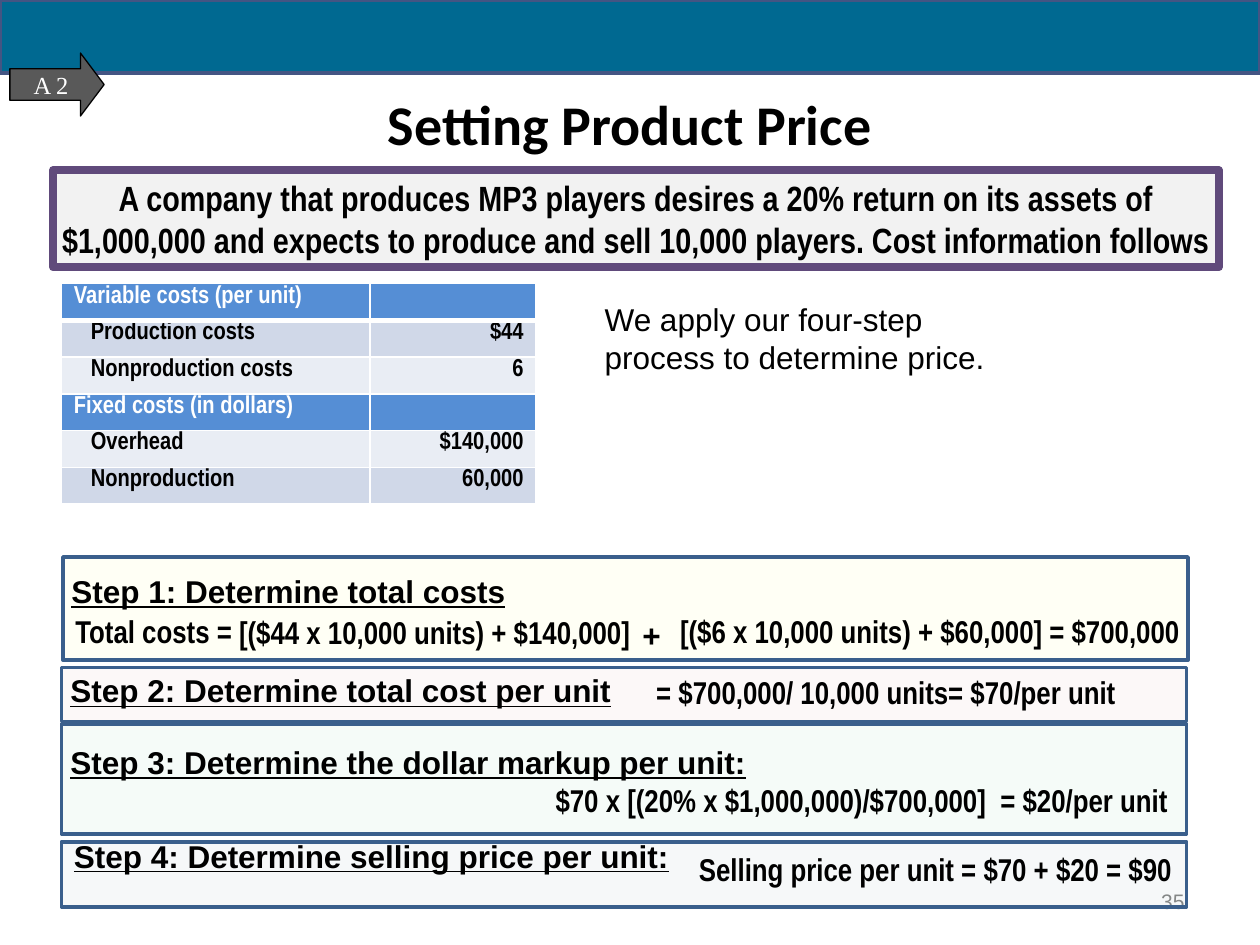
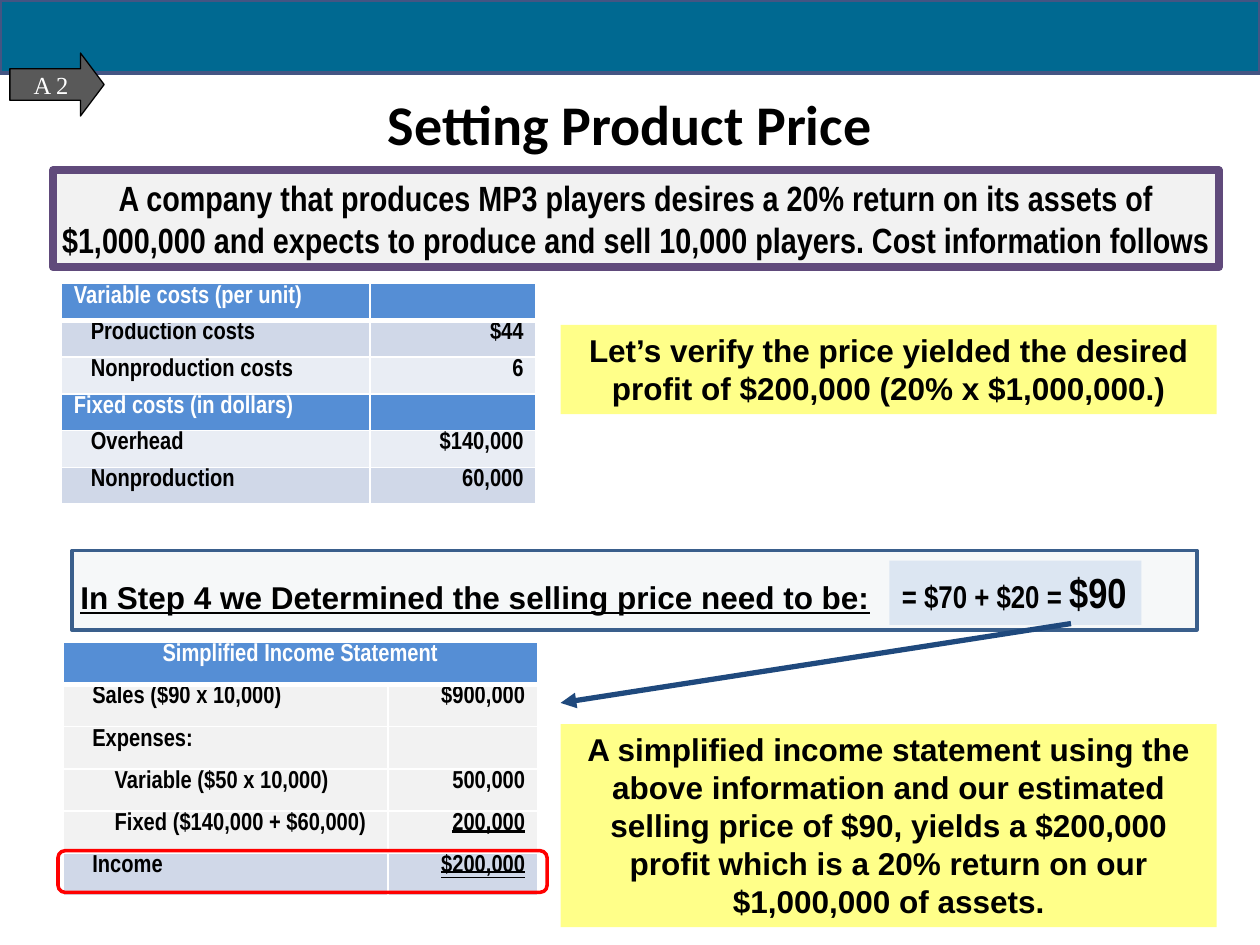
from lxml.etree import SubElement
from pptx import Presentation
from pptx.dml.color import RGBColor
from pptx.enum.shapes import MSO_CONNECTOR, MSO_SHAPE
from pptx.enum.text import MSO_ANCHOR, MSO_UNDERLINE, PP_ALIGN
from pptx.oxml.ns import qn
from pptx.util import Cm, Pt

BLACK, WHITE, BLUE = "000000", "FFFFFF", "558ED5"
LIGHT, PALE, GREY = "D0D8E8", "E9EDF4", "F2F2F2"
STEP_LINE, YELLOW = "3A5F8C", "FFFF89"
LEFT, CENTER, RIGHT = PP_ALIGN.LEFT, PP_ALIGN.CENTER, PP_ALIGN.RIGHT

# Text formats
BODY = dict(name="Arial", size=18, color=BLACK)
BOLD = dict(BODY, bold=True)
HEADING = dict(BOLD, underline=True)
FORMULA = dict(BOLD, name="Arial Narrow")
BANNER = dict(FORMULA, size=20)
CELL = dict(FORMULA, size=14)
TITLE = dict(BOLD, name="Calibri", size=32)
TAG = dict(name="Times New Roman", size=14, color=WHITE)
NUMBER = dict(name="Arial", size=12, color="898989")

STEP_W, LINE_H = 22.68, 1.02


def rgb(value):
    return RGBColor.from_string(value)


def cm(*values):
    return [Cm(v) for v in values]


class Deck:
    """Holds the presentation, its style and the current slide."""

    def __init__(self):
        self.prs = Presentation()
        self.prs.slide_width, self.prs.slide_height = cm(25.4, 19.05)
        self.slide = None

    def new_slide(self):
        """Start a slide with the shared band, tag, title and banner."""
        self.slide = self.prs.slides.add_slide(self.prs.slide_layouts[6])
        self.shape((0, 0, 25.4, 1.47), "006991", ("445583", 2.25))
        banner = self.shape((1.07, 3.43, 23.5, 1.96), GREY, ("604A7B", 4.5))
        self.fill_text(banner.text_frame, [(
            "A company that produces MP3 players desires a 20% return on its "
            "assets of $1,000,000 and expects to produce and sell 10,000 "
            "players. Cost information follows", BANNER)], CENTER,
            margin_left=0, margin_right=0)
        self.text((1.27, 0.89, 22.86, 3.18), "Setting Product Price", TITLE,
                  CENTER, vertical_anchor=MSO_ANCHOR.MIDDLE)
        tag = self.shape((0.2, 1.07, 1.9, 1.27), "595959", (BLACK, 0.75),
                         MSO_SHAPE.RIGHT_ARROW)
        tag.adjustments[0], tag.adjustments[1] = 0.5, 0.375
        self.fill_text(tag.text_frame, [("A 2", TAG)], CENTER,
                       word_wrap=False, vertical_anchor=MSO_ANCHOR.MIDDLE)

    def cost_table(self):
        # Each row: label, value, fill, indent
        self.table((1.24, 5.72), (6.22, 3.35), 0.74, [
            ("Variable costs (per unit)", "", BLUE, 0),
            ("Production costs", "$44", LIGHT, 1),
            ("Nonproduction costs", "6", PALE, 1),
            ("Fixed costs (in dollars)", "", BLUE, 0),
            ("Overhead", "$140,000", PALE, 1),
            ("Nonproduction", "60,000", LIGHT, 1),
        ])

    def fill_text(self, tf, runs, align=LEFT, **frame):
        frame = {"word_wrap": True, "vertical_anchor": MSO_ANCHOR.TOP, **frame}
        for key, value in frame.items():
            setattr(tf, key, value)
        p = tf.paragraphs[0]
        p.alignment = align
        for text, style in runs:
            r = p.add_run()
            r.text = text
            for key, value in style.items():
                if key == "color":
                    r.font.color.rgb = rgb(value)
                else:
                    setattr(r.font, key, Pt(value) if key == "size" else value)

    def text(self, box, text, style, align=LEFT, **frame):
        sp = self.slide.shapes.add_textbox(*cm(*box))
        self.fill_text(sp.text_frame, [(text, style)], align, **frame)

    def shape(self, box, fill=None, line=None, kind=MSO_SHAPE.RECTANGLE,
              alpha=None):
        sp = self.slide.shapes.add_shape(kind, *cm(*box))
        sp.shadow.inherit = False
        if fill:
            sp.fill.solid()
            sp.fill.fore_color.rgb = rgb(fill)
        else:
            sp.fill.background()
        if alpha:
            color = sp._element.spPr.find(qn("a:solidFill")).find(
                qn("a:srgbClr"))
            SubElement(color, qn("a:alpha"), val=str(alpha * 1000))
        if line:
            sp.line.color.rgb, sp.line.width = rgb(line[0]), Pt(line[1])
        else:
            sp.line.fill.background()
        return sp

    def step(self, left, top, height, tint):
        self.shape((left, top, STEP_W, height), tint, (STEP_LINE, 2), alpha=4)

    def note(self, top, height, text):
        sp = self.shape((11.3, top, 13.23, height), YELLOW)
        self.fill_text(sp.text_frame, [(text, BOLD)], CENTER)

    def arrow(self, start, end, color, width):
        line = self.slide.shapes.add_connector(MSO_CONNECTOR.STRAIGHT,
                                               *cm(*start, *end))
        line.line.color.rgb, line.line.width = rgb(color), Pt(width)
        sp_pr = line._element.spPr
        SubElement(sp_pr.find(qn("a:ln")), qn("a:tailEnd"), type="triangle")
        SubElement(sp_pr, qn("a:effectLst"))

    def border(self, cell, bottom):
        """White cell borders, placed before the fill."""
        tc_pr = cell._tc.get_or_add_tcPr()
        for i, side in enumerate(("lnL", "lnR", "lnT", "lnB")):
            width = Pt(bottom if side == "lnB" else 1)
            ln = SubElement(tc_pr, qn("a:" + side), w=str(width))
            solid = SubElement(ln, qn("a:solidFill"))
            SubElement(solid, qn("a:srgbClr"), val=WHITE)
            tc_pr.insert(i, ln)

    def table(self, corner, widths, row_h, rows, underlines=None):
        size = sum(widths), row_h * len(rows)
        table = self.slide.shapes.add_table(len(rows), len(widths),
                                            *cm(*corner, *size)).table
        for col, width in zip(table.columns, widths):
            col.width = Cm(width)
        for y, (label, value, fill, indent) in enumerate(rows):
            table.rows[y].height = Cm(row_h)
            for x, text in enumerate((label, value)):
                cell = table.cell(y, x)
                cell.fill.solid()
                cell.fill.fore_color.rgb = rgb(fill)
                cell.margin_top = cell.margin_bottom = Cm(0.03)
                cell.margin_left = Cm(0.25 + (0 if x else 0.34 * indent))
                self.border(cell, 1 if y else 3)
                style = dict(CELL, color=WHITE if fill == BLUE else BLACK)
                if x and underlines and y in underlines:
                    style["underline"] = underlines[y]
                if text:
                    self.fill_text(cell.text_frame, [(text, style)],
                                   RIGHT if x else LEFT)
                else:
                    p = cell.text_frame.paragraphs[0]
                    SubElement(p._p, qn("a:endParaRPr"), sz="1400")
        return table


def price_slide(deck):
    deck.new_slide()
    deck.text((18.21, 17.65, 5.92, LINE_H), "35", NUMBER, RIGHT,
              vertical_anchor=MSO_ANCHOR.MIDDLE)
    deck.cost_table()
    deck.text((11.94, 5.92, 9.22, 1.8),
              "We apply our four-step process to determine price.", BODY)

    # Step boxes: left, top, height, tint
    for box in [(1.27, 11.23, 2.08, "FFFF00"), (1.24, 13.46, 1.09, "C0504D"),
                (1.24, 14.6, 2.21, "00B050"), (1.24, 16.97, 1.32, "215968")]:
        deck.step(*box)

    # Step texts: left, top, width, text, style
    for left, top, width, text, style in [
        (1.19, 11.4, 9.63, "Step 1: Determine total costs", HEADING),
        (1.27, 12.22, 6.2, "Total costs =", FORMULA),
        (4.57, 12.24, 8.64, "[($44 x 10,000 units) + $140,000]", FORMULA),
        (12.7, 12.29, 1.09, "+", BOLD),
        (13.46, 12.22, 11.76, "[($6 x 10,000 units) + $60,000] = $700,000",
         FORMULA),
        (1.17, 13.41, 11.94, "Step 2: Determine total cost per unit", HEADING),
        (12.98, 13.44, 11.66, "= $700,000/ 10,000 units= $70/per unit",
         FORMULA),
        (1.17, 14.86, 16.61, "Step 3: Determine the dollar markup per unit:",
         HEADING),
        (10.95, 15.62, 13.18,
         "$70 x [(20% x $1,000,000)/$700,000]  = $20/per unit", FORMULA),
        (1.24, 16.74, 15.24, "Step 4: Determine selling price per unit:",
         HEADING),
        (13.84, 17.02, 10.72, "Selling price per unit = $70 + $20 = $90",
         FORMULA),
    ]:
        deck.text((left, top, width, LINE_H), text, style)


def proof_slide(deck):
    deck.new_slide()
    deck.cost_table()

    # Selling price
    deck.step(1.45, 11.1, 1.6, "215968")
    deck.text((1.37, 11.53, 23.19, LINE_H),
              "In Step 4 we Determined the selling price need to be:", HEADING)
    price = deck.shape((17.93, 11.3, 5.08, 1.3), "DCE6F2")
    deck.fill_text(price.text_frame, [("= $70 + $20 = ", FORMULA),
                                      ("$90", dict(FORMULA, size=24))])
    deck.note(6.55, 1.8, "Let’s verify the price yielded the desired profit "
                         "of $200,000 (20% x $1,000,000.)")

    # Income statement
    income = deck.table((1.27, 12.95), (6.55, 3.02), 0.85, [
        ("Simplified Income Statement", "", BLUE, 0),
        ("Sales ($90 x 10,000)", "$900,000", GREY, 1),
        ("Expenses:", "", GREY, 1),
        ("Variable ($50 x 10,000)", "500,000", GREY, 2.33),
        ("Fixed ($140,000 + $60,000)", "200,000", GREY, 2.33),
        ("Income", "$200,000", LIGHT, 1),
    ], {4: True, 5: MSO_UNDERLINE.DOUBLE_LINE})
    header = income.cell(0, 0)
    header.merge(income.cell(0, 1))
    header.text_frame.paragraphs[0].alignment = CENTER

    deck.arrow((21.59, 12.57), (11.3, 14.17), "1F497D", 3)
    deck.note(14.6, 4.09, "A simplified income statement using the above "
                          "information and our estimated selling price of "
                          "$90, yields a $200,000 profit which is a 20% "
                          "return on our $1,000,000 of assets.")
    deck.shape((1.17, 17.15, 9.86, 0.84), line=("FF0000", 2),
               kind=MSO_SHAPE.ROUNDED_RECTANGLE)


def main():
    deck = Deck()
    price_slide(deck)
    proof_slide(deck)
    deck.prs.save("out.pptx")


if __name__ == "__main__":
    main()
